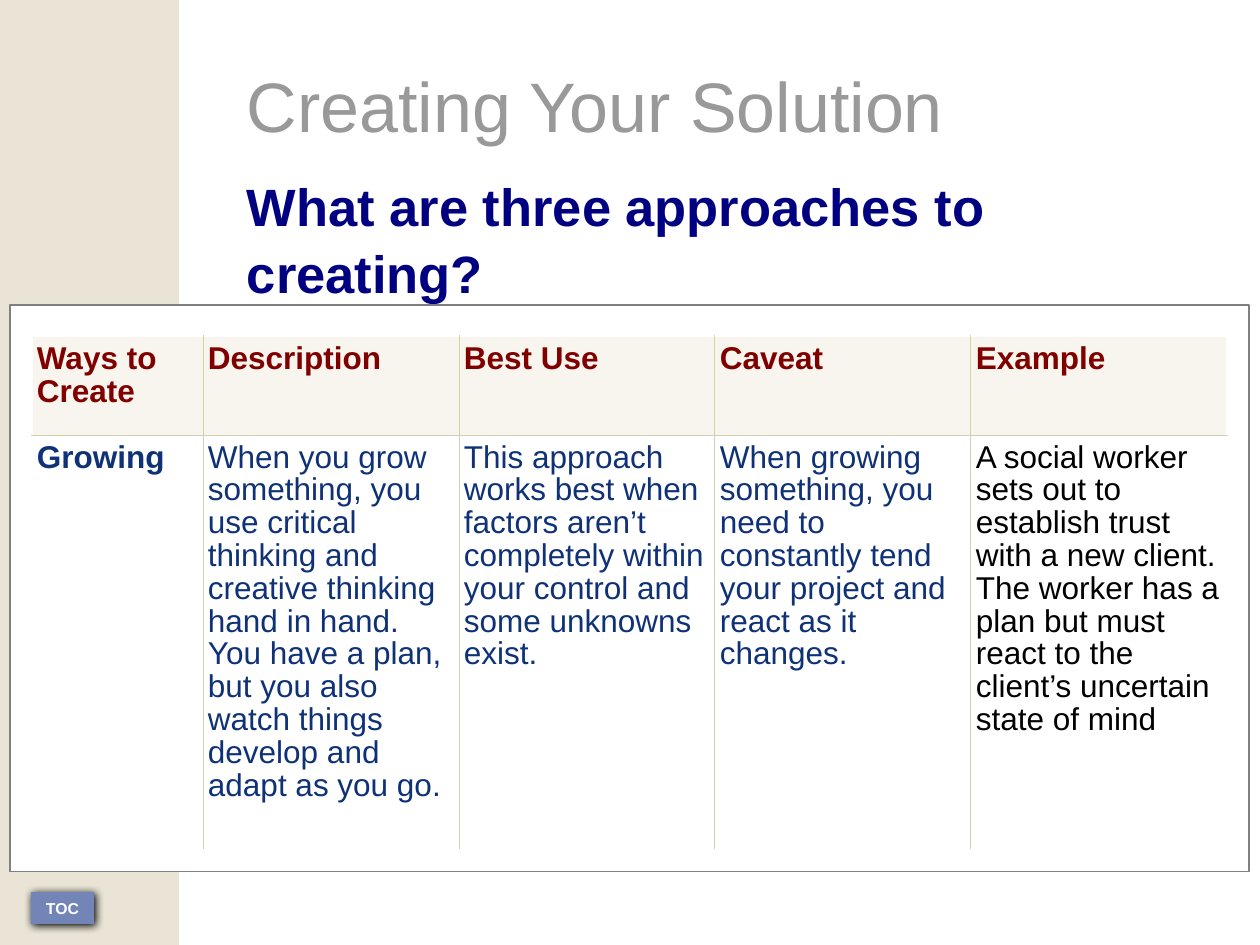
from dataclasses import dataclass

from lxml import etree
from pptx import Presentation
from pptx.dml.color import RGBColor
from pptx.enum.shapes import MSO_SHAPE
from pptx.enum.text import MSO_ANCHOR, PP_ALIGN
from pptx.oxml.ns import qn
from pptx.util import Emu, Pt

RECT = MSO_SHAPE.RECTANGLE
TOP, MIDDLE = MSO_ANCHOR.TOP, MSO_ANCHOR.MIDDLE
LEFT, CENTER = PP_ALIGN.LEFT, PP_ALIGN.CENTER
EMU_PER_PX = 914400 / 126


@dataclass(frozen=True)
class Theme:
    font: str = "Arial"
    white: str = "FFFFFF"
    black: str = "000000"
    sidebar: str = "E9E4D5"
    button: str = "7384B6"
    title: str = "999999"
    question: str = "000080"
    frame: str = "808080"
    head_fill: str = "F7F5ED"
    head_text: str = "800000"
    body_text: str = "0F3277"
    rule: str = "D1D1B0"
    title_size: int = 40
    question_size: int = 30
    table_size: int = 18
    button_size: int = 9


T = Theme()

HEADERS = ["Ways to Create", "Description", "Best Use", "Caveat", "Example"]
GROWING = [
    "Growing",
    "When you grow something, you use critical thinking and creative thinking "
    "hand in hand. You have a plan, but you also watch things develop and "
    "adapt as you go.",
    "This approach works best when factors aren’t completely within your "
    "control and some unknowns exist.",
    "When growing something, you need to constantly tend your project and "
    "react as it changes.",
    "A social worker sets out to establish trust with a new client. The worker "
    "has a plan but must react to the client’s uncertain state of mind",
]


def px(n):
    return Emu(round(n * EMU_PER_PX))


def rgb(color):
    return RGBColor.from_string(color)


def add_text(p, text, size, color, bold=False, align=LEFT, spacing=None, after=0):
    p.alignment = align
    p.space_after = Pt(after)
    if spacing:
        p.line_spacing = spacing
    r = p.add_run()
    r.text = text
    r.font.name, r.font.size, r.font.bold = T.font, Pt(size), bold
    r.font.color.rgb = rgb(color)


def set_margins(obj, left, top, right, bottom):
    obj.margin_left, obj.margin_top = px(left), px(top)
    obj.margin_right, obj.margin_bottom = px(right), px(bottom)


def add_rect(slide, x, y, w, h, fill, line=None):
    sp = slide.shapes.add_shape(RECT, px(x), px(y), px(w), px(h))
    sp.shadow.inherit = False
    sp.fill.solid()
    sp.fill.fore_color.rgb = rgb(fill)
    if line:
        sp.line.color.rgb = rgb(line)
        sp.line.width = Pt(0.71)
    else:
        sp.line.fill.background()
    return sp


def add_shadow(sp, color, blur, dist, degrees):
    effects = sp._element.spPr.find(qn("a:effectLst"))
    shadow = etree.SubElement(
        effects, qn("a:outerShdw"), blurRad=str(Pt(blur)), dist=str(Pt(dist)),
        dir=str(degrees * 60000), algn="ctr", rotWithShape="0")
    etree.SubElement(shadow, qn("a:srgbClr"), val=color)


def add_borders(cell, sides):
    # Borders come before the fill in the cell properties
    tc_pr = cell._tc.get_or_add_tcPr()
    for i, side in enumerate(s for s in "LRTB" if s in sides):
        ln = etree.Element(qn("a:ln" + side), w=str(Pt(0.57)))
        fill = etree.SubElement(ln, qn("a:solidFill"))
        etree.SubElement(fill, qn("a:srgbClr"), val=T.rule)
        tc_pr.insert(i, ln)


def add_toc_button(slide, x, y, w, h):
    sp = add_rect(slide, x, y, w, h, T.button)
    add_shadow(sp, T.black, 5, 1.4, 45)
    tf = sp.text_frame
    tf.word_wrap = True
    tf.vertical_anchor = MIDDLE
    set_margins(tf, 13, 6, 13, 6)
    add_text(tf.paragraphs[0], "TOC", T.button_size, T.white, bold=True, align=CENTER)


def add_heading(slide, x, y, w, h):
    tf = slide.shapes.add_textbox(px(x), px(y), px(w), px(h)).text_frame
    tf.word_wrap = True
    tf.vertical_anchor = TOP
    set_margins(tf, 13, 10, 13, 6)
    add_text(tf.paragraphs[0], "Creating Your Solution", T.title_size, T.title,
             spacing=1.05, after=14.4)
    add_text(tf.add_paragraph(), "What are three approaches to creating?",
             T.question_size, T.question, bold=True, spacing=1.05)


def add_approach_table(slide, x, y, w, h):
    add_rect(slide, x, y, w, h, T.white, T.frame)
    first_col, other_col, head_row, body_row = 171, 256, 99, 415
    last = len(HEADERS) - 1
    table = slide.shapes.add_table(
        2, len(HEADERS), px(x + 22), px(y + 31),
        px(first_col + last * other_col), px(head_row + body_row)).table
    table.first_row = table.horz_banding = False
    for c, col in enumerate(table.columns):
        col.width = px(other_col if c else first_col)
    for row, height in zip(table.rows, (head_row, body_row)):
        row.height = px(height)

    for r, texts in enumerate((HEADERS, GROWING)):
        for c, text in enumerate(texts):
            cell = table.cell(r, c)
            cell.fill.solid()
            cell.fill.fore_color.rgb = rgb(T.white if r else T.head_fill)
            cell.vertical_anchor = TOP
            set_margins(cell, 5, 7, 5, 5)
            # Rules run only between cells, not around the table
            add_borders(cell, ("L" if c else "") + ("R" if c < last else "")
                        + ("T" if r else "B"))
            if r == 0:
                color = T.head_text
            else:
                color = T.black if c == last else T.body_text
            add_text(cell.text_frame.paragraphs[0], text, T.table_size, color,
                     bold=r == 0 or c == 0, spacing=0.93)


def main():
    prs = Presentation()
    prs.slide_width, prs.slide_height = px(1260), px(945)
    slide = prs.slides.add_slide(prs.slide_layouts[6])

    # Sidebar and contents button
    add_rect(slide, 0, 0, 179, 945, T.sidebar)
    add_toc_button(slide, 31, 892, 63, 32)

    # Heading and framed table
    add_heading(slide, 234, 48, 950, 330)
    add_approach_table(slide, 10, 305, 1239, 567)

    prs.save("out.pptx")


if __name__ == "__main__":
    main()
